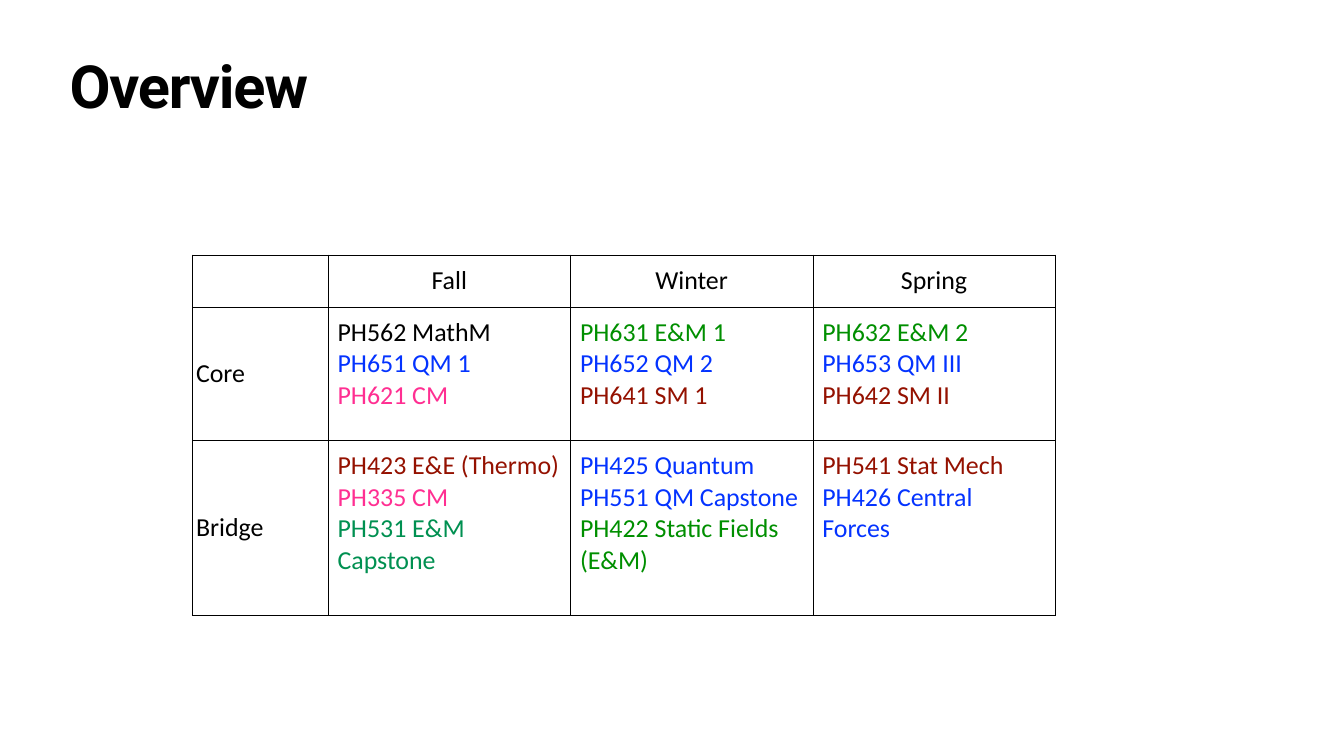
from dataclasses import dataclass

from lxml.etree import SubElement
from pptx import Presentation
from pptx.dml.color import RGBColor as Color
from pptx.enum.text import MSO_ANCHOR as Anchor, PP_ALIGN as Align
from pptx.oxml import parse_xml
from pptx.oxml.ns import nsdecls, qn
from pptx.util import Inches, Pt


@dataclass(frozen=True)
class Theme:
    title_font: str = "Roboto"
    body_font: str = "Calibri"
    title_size: float = 85
    body_size: float = 37
    title_tracking: float = -1.7
    border_width: float = 1
    black: str = "000000"
    blue: str = "0433FF"
    pink: str = "FF2F92"
    green: str = "008F00"
    teal: str = "009051"
    red: str = "941100"


THEME = Theme()
SLIDE_WIDTH, SLIDE_HEIGHT = 26.67, 15
TABLE_LEFT, TABLE_TOP = 3.82, 5.06
COLUMN_WIDTHS = [2.69] + [4.81] * 3
ROW_HEIGHTS = [1.03, 2.65, 3.47]
LABEL_MARGINS = (0.07, 0)  # horizontal, vertical
COURSE_MARGINS = (0.19, 0.19)

TERMS = ["Fall", "Winter", "Spring"]
# Each programme holds one list of (course, colour) per term
PROGRAMMES = {
    "Core": [
        [("PH562 MathM", THEME.black), ("PH651 QM 1", THEME.blue), ("PH621 CM", THEME.pink)],
        [("PH631 E&M 1", THEME.green), ("PH652 QM 2", THEME.blue), ("PH641 SM 1", THEME.red)],
        [("PH632 E&M 2", THEME.green), ("PH653 QM III", THEME.blue), ("PH642 SM II", THEME.red)],
    ],
    "Bridge": [
        [("PH423 E&E (Thermo)", THEME.red), ("PH335 CM", THEME.pink),
         ("PH531 E&M Capstone", THEME.teal)],
        [("PH425 Quantum", THEME.blue), ("PH551 QM Capstone", THEME.blue),
         ("PH422 Static Fields (E&M)", THEME.green)],
        [("PH541 Stat Mech", THEME.red), ("PH426 Central Forces", THEME.blue)],
    ],
}


def style_font(font, name, size, color, bold=False):
    font.name, font.size, font.bold = name, Pt(size), bold
    font.color.rgb = Color.from_string(color)


def add_title(slide, text):
    title = slide.shapes.title
    title.left, title.top = Inches(1.32), Inches(1.18)
    title.width, title.height = Inches(24.03), Inches(1.57)
    frame = title.text_frame
    frame.text = text
    frame.word_wrap = True
    frame.vertical_anchor = Anchor.TOP
    frame.margin_left = frame.margin_right = Inches(0.06)
    frame.margin_top = frame.margin_bottom = Inches(0.06)
    paragraph = frame.paragraphs[0]
    paragraph.alignment = Align.LEFT
    paragraph.line_spacing = 0.8
    style_font(paragraph.font, THEME.title_font, THEME.title_size, THEME.black, bold=True)
    # Letter spacing is given in hundredths of a point
    run_properties = paragraph.runs[0].font._element
    run_properties.set("spc", str(round(THEME.title_tracking * 100)))


def add_borders(cell):
    cell.fill.background()
    properties = cell._tc.get_or_add_tcPr()
    for index, side in enumerate("LRTB"):
        line = parse_xml(f'<a:ln{side} {nsdecls("a")} w="{Pt(THEME.border_width)}"/>')
        fill = SubElement(line, qn("a:solidFill"))
        SubElement(fill, qn("a:srgbClr"), val=THEME.black)
        properties.insert(index, line)


def fill_cell(cell, lines, margins, anchor, alignment=Align.LEFT):
    horizontal, vertical = margins
    cell.margin_left = cell.margin_right = Inches(horizontal)
    cell.margin_top = cell.margin_bottom = Inches(vertical)
    cell.vertical_anchor = anchor
    frame = cell.text_frame
    frame.text = "\n".join(text for text, _ in lines)
    for paragraph, (_, color) in zip(frame.paragraphs, lines):
        paragraph.alignment = alignment
        style_font(paragraph.font, THEME.body_font, THEME.body_size, color)


def fill_label(cell, text, alignment=Align.LEFT):
    fill_cell(cell, [(text, THEME.black)], LABEL_MARGINS, Anchor.MIDDLE, alignment)


def add_course_table(slide):
    table = slide.shapes.add_table(
        len(ROW_HEIGHTS), len(COLUMN_WIDTHS), Inches(TABLE_LEFT), Inches(TABLE_TOP),
        Inches(sum(COLUMN_WIDTHS)), Inches(sum(ROW_HEIGHTS))).table
    table.first_row = table.horz_banding = False
    for column, width in zip(table.columns, COLUMN_WIDTHS):
        column.width = Inches(width)
    for row, height in zip(table.rows, ROW_HEIGHTS):
        row.height = Inches(height)
    for cell in table.iter_cells():
        add_borders(cell)

    # Term headings
    for column, term in enumerate(TERMS, start=1):
        fill_label(table.cell(0, column), term, Align.CENTER)

    # One row per programme
    for row, (programme, terms) in enumerate(PROGRAMMES.items(), start=1):
        fill_label(table.cell(row, 0), programme)
        for column, courses in enumerate(terms, start=1):
            fill_cell(table.cell(row, column), courses, COURSE_MARGINS, Anchor.TOP)


def main():
    presentation = Presentation()
    presentation.slide_width = Inches(SLIDE_WIDTH)
    presentation.slide_height = Inches(SLIDE_HEIGHT)
    slide = presentation.slides.add_slide(presentation.slide_layouts.get_by_name("Title Only"))
    add_title(slide, "Overview")
    add_course_table(slide)
    presentation.save("out.pptx")


if __name__ == "__main__":
    main()
